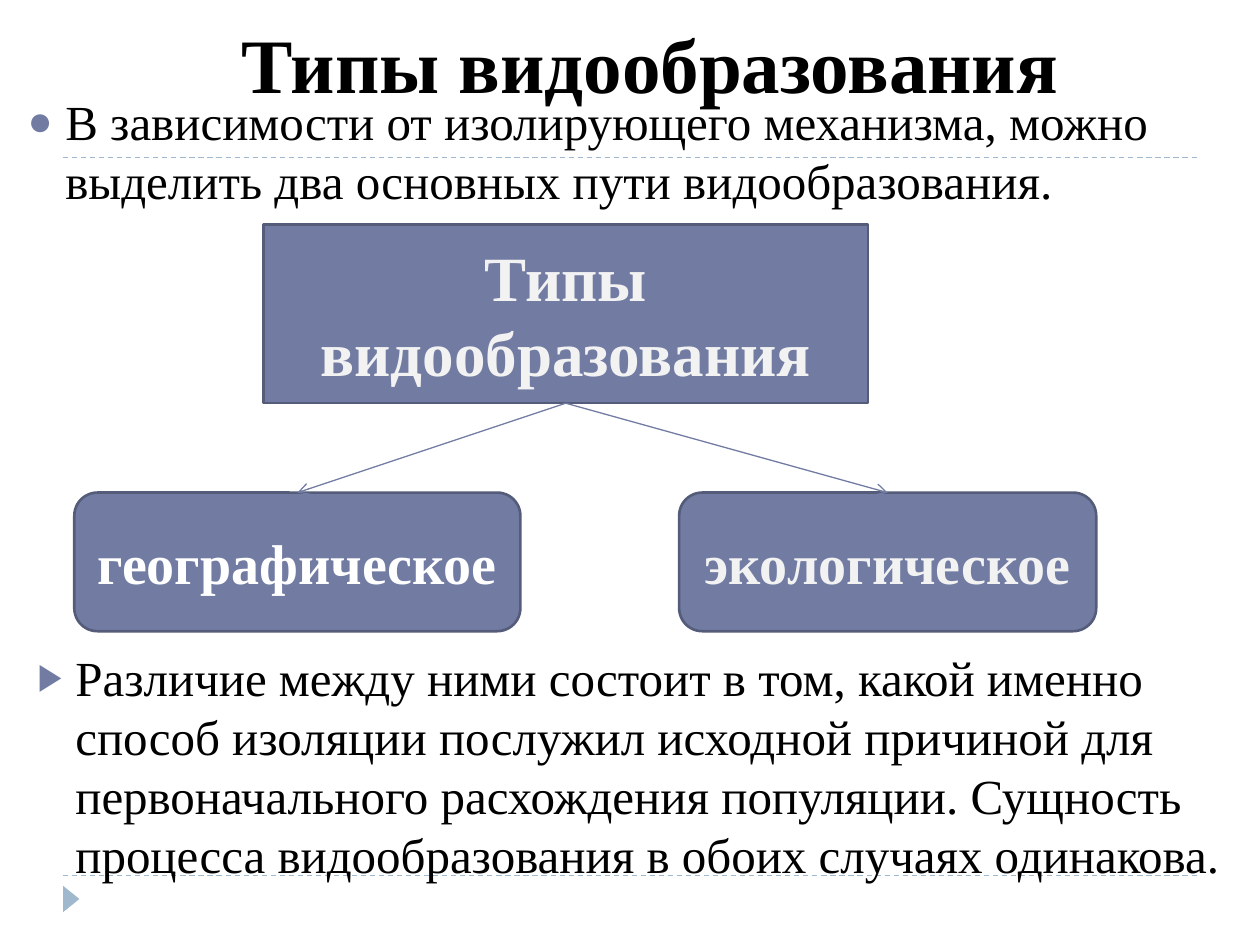
from lxml.etree import SubElement
from pptx import Presentation
from pptx.dml.color import RGBColor
from pptx.enum.dml import MSO_LINE_DASH_STYLE as Dash
from pptx.enum.shapes import MSO_CONNECTOR as Connector, MSO_SHAPE as Shape
from pptx.enum.text import MSO_ANCHOR as Anchor, PP_ALIGN as Align
from pptx.oxml.ns import qn
from pptx.util import Inches, Pt

COLORS = {
    "ink": "000000",
    "accent": "727CA3",
    "border": "545C79",
    "trim": "9FB8CD",
    "white": "FFFFFF",
    "pale": "F2F2F2",
}


class SlideBuilder:
    """Holds the style and the current slide, and draws each kind of element."""

    font_name = "Times New Roman"

    def __init__(self, slide):
        self.slide = slide

    def color(self, name):
        return RGBColor.from_string(COLORS[name])

    def label(self, shape, text, size, color, bold=True, align=Align.CENTER, anchor=Anchor.MIDDLE):
        frame = shape.text_frame
        frame.word_wrap = True
        frame.vertical_anchor = anchor
        paragraph = frame.paragraphs[0]
        paragraph.alignment = align
        run = paragraph.add_run()
        run.text = text
        font_format = {"name": self.font_name, "size": Pt(size), "bold": bold}
        for key, value in font_format.items():
            setattr(run.font, key, value)
        run.font.color.rgb = self.color(color)
        return paragraph

    def text(self, at, text, size, **style):
        box = self.slide.shapes.add_textbox(*map(Inches, at))
        return self.label(box, text, size, "ink", **style)

    def bullet(self, at, text, mark, percent, space_before):
        paragraph = self.text(at, text, 28, bold=False, align=Align.LEFT, anchor=Anchor.TOP)
        paragraph.space_before = Pt(space_before)
        props = paragraph._p.get_or_add_pPr()
        props.set("marL", str(Inches(0.3)))
        props.set("indent", str(Inches(-0.3)))
        bullet_color = SubElement(props, qn("a:buClr"))
        SubElement(bullet_color, qn("a:srgbClr"), val=COLORS["accent"])
        SubElement(props, qn("a:buSzPct"), val=str(percent * 1000))
        SubElement(props, qn("a:buFont"), typeface="Arial")
        SubElement(props, qn("a:buChar"), char=mark)

    def shape(self, kind, at, fill, border=None):
        shape = self.slide.shapes.add_shape(kind, *map(Inches, at))
        shape.shadow.inherit = False
        shape.fill.solid()
        shape.fill.fore_color.rgb = self.color(fill)
        if border:
            shape.line.color.rgb = self.color(border)
            shape.line.width = Pt(1.5)
        else:
            shape.line.fill.background()
        return shape

    def box(self, kind, at, text, size, color):
        box = self.shape(kind, at, "accent", "border")
        self.label(box, text, size, color)
        return box

    def line(self, start, end, color):
        ends = map(Inches, (*start, *end))
        line = self.slide.shapes.add_connector(Connector.STRAIGHT, *ends)
        line.line.color.rgb = self.color(color)
        line.line.width = Pt(0.75)
        SubElement(line._element.spPr, qn("a:effectLst"))
        return line

    def rule(self, y):
        self.line((0.5, y), (9.5, y), "trim").line.dash_style = Dash.DASH

    def arrow(self, parent, child):
        arrow = self.line((0, 0), (1, 1), "accent")
        arrow.begin_connect(parent, 2)
        arrow.end_connect(child, 0)
        outline = arrow._element.spPr.find(qn("a:ln"))
        SubElement(outline, qn("a:tailEnd"), type="arrow")


def main():
    deck = Presentation()
    deck.slide_width, deck.slide_height = Inches(10), Inches(7.5)
    builder = SlideBuilder(deck.slides.add_slide(deck.slide_layouts[6]))

    for y in (6.95, 1.25):
        builder.rule(y)
    builder.shape(Shape.ISOSCELES_TRIANGLE, (0.46, 7.07, 0.21, 0.13), "trim").rotation = 90

    builder.text((0.91, -0.34, 8.5, 1.25), "Типы видообразования", 44, anchor=Anchor.BOTTOM)
    builder.bullet(
        (0.2, 5.09, 9.8, 4.65),
        "Различие между ними состоит в том, какой именно способ изоляции послужил "
        "исходной причиной для первоначального расхождения популяции. Сущность "
        "процесса видообразования в обоих случаях одинакова.",
        "▶", 76, 6,
    )

    branches = [
        builder.box(Shape.ROUNDED_RECTANGLE, (left, 3.91, width, 1.1), name, 32, color)
        for left, width, name, color in (
            (0.59, 3.54, "географическое", "white"),
            (5.39, 3.31, "экологическое", "pale"),
        )
    ]
    types = builder.box(Shape.RECTANGLE, (2.09, 1.78, 4.8, 1.42), "Типы видообразования", 36, "pale")
    for branch in branches:
        builder.arrow(types, branch)

    builder.bullet(
        (0.12, 0.68, 9.88, 4.65),
        "В зависимости от изолирующего механизма, можно выделить два основных пути видообразования.",
        "●", 85, 5.8,
    )
    deck.save("out.pptx")


if __name__ == "__main__":
    main()
